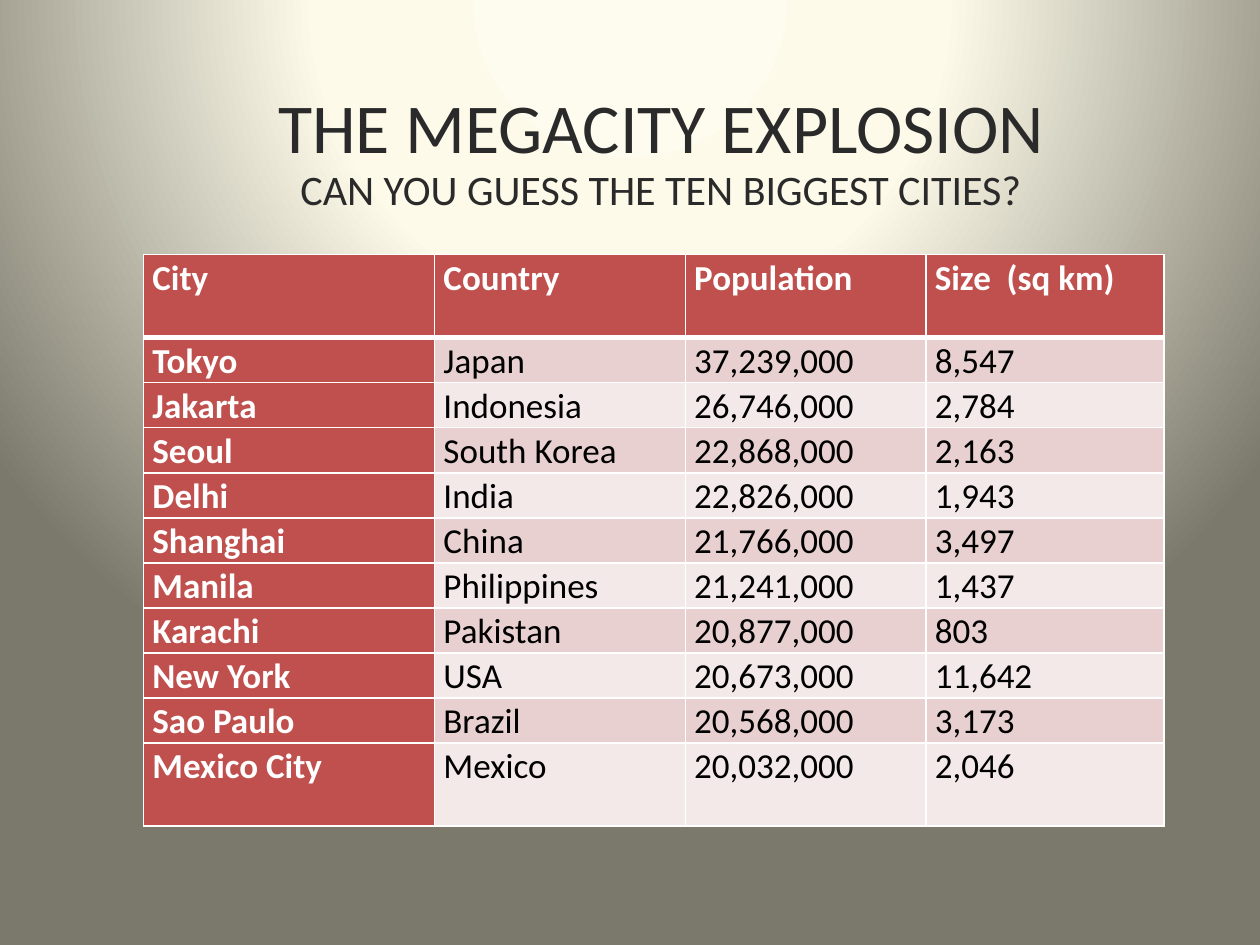
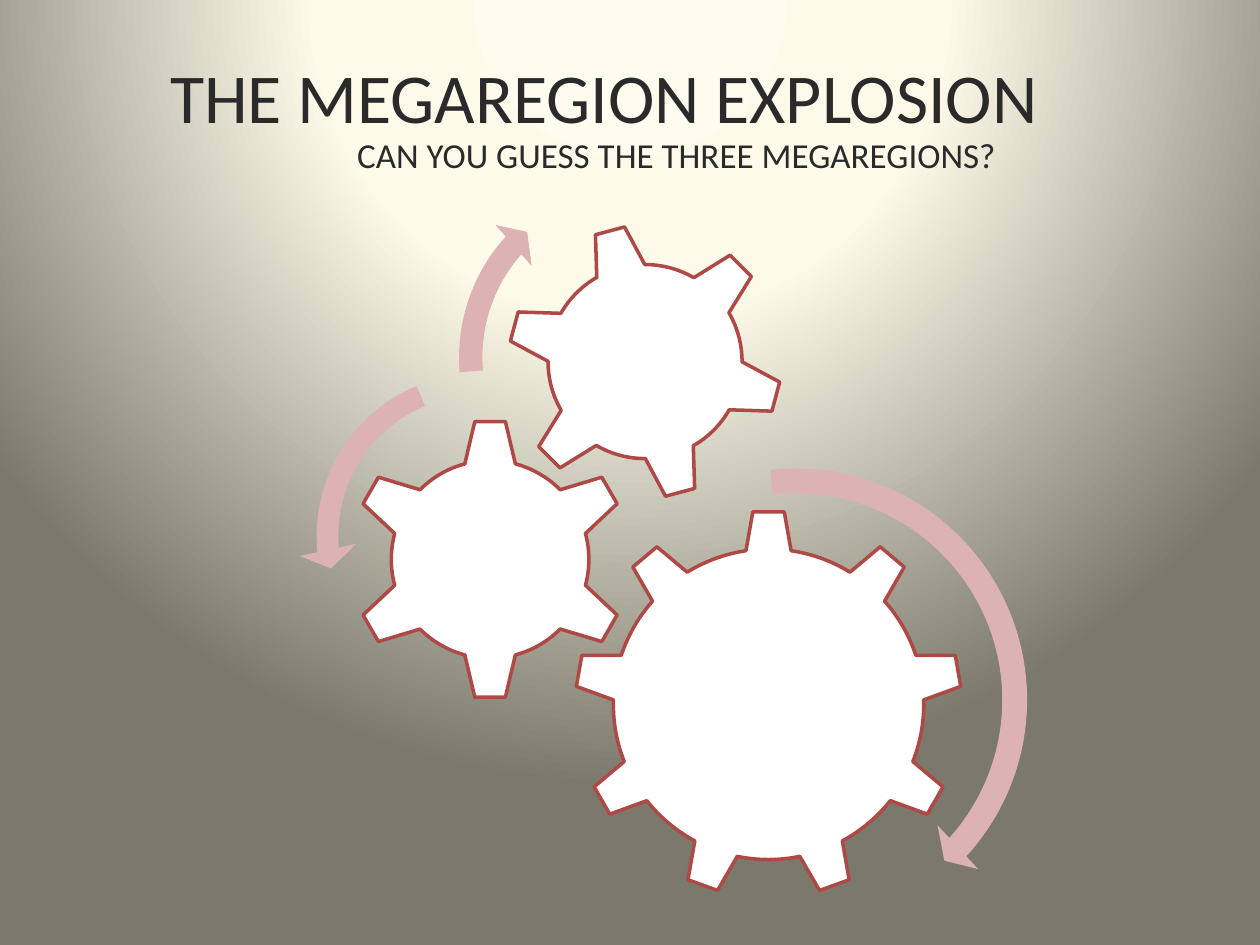
from pptx import Presentation
from pptx.dml.color import RGBColor
from pptx.enum.shapes import MSO_SHAPE as SHAPE
from pptx.enum.text import MSO_ANCHOR as ANCHOR, MSO_AUTO_SIZE as FIT, PP_ALIGN as ALIGN
from pptx.oxml import parse_xml
from pptx.oxml.ns import nsdecls
from pptx.util import Inches, Pt

COLORS = {
    "glow": "FEFCEE", "cream": "FDFAEA", "olive": "7B796B", "title": "2A2A2A",
    "red": "C0504D", "band": "E8D0D0", "pale": "F4E9E9", "white": "FFFFFF",
    "black": "000000", "gear_line": "AE4946", "arrow": "DCB3B2",
}
FONT = "Calibri"
TITLE_BOX = (1, 0.3, 8.49, 1.45)

CITY_BOX = (1.14, 2.02)
CITY_COLS = (2.31, 1.99, 1.91, 1.89)
TALL_ROW, ROW = 0.66, 0.33
CITIES = [
    ("City", "Country", "Population", "Size  (sq km)"),
    ("Tokyo", "Japan", "37,239,000", "8,547"),
    ("Jakarta", "Indonesia", "26,746,000", "2,784"),
    ("Seoul", "South Korea", "22,868,000", "2,163"),
    ("Delhi", "India", "22,826,000", "1,943"),
    ("Shanghai", "China", "21,766,000", "3,497"),
    ("Manila", "Philippines", "21,241,000", "1,437"),
    ("Karachi", "Pakistan", "20,877,000", "803"),
    ("New York", "USA", "20,673,000", "11,642"),
    ("Sao Paulo", "Brazil", "20,568,000", "3,173"),
    ("Mexico City", "Mexico", "20,032,000", "2,046"),
]

GEAR_BOX = (2.37, 1.29)
GEARS = [
    (SHAPE.GEAR_9, 2.19, 2.76, 3.08, 0),
    (SHAPE.GEAR_6, 0.4, 2.03, 2.24, 0),
    (SHAPE.GEAR_6, 1.65, 0.48, 2.2, 345),
]
ARROWS = [
    (SHAPE.CIRCULAR_ARROW, 1.97, 2.29, 3.95, (0.05, 2.99, 25.35, 158.22, 0.06)),
    (SHAPE.LEFT_CIRCULAR_ARROW, 0, 1.53, 2.87, (0.06, 4.3, 104.89, 148.38, 0.08)),
    (SHAPE.CIRCULAR_ARROW, 1.15, 0, 3.09, (0.06, 3.94, 133.14, 105.08, 0.07)),
]


def rgb(name):
    """Return the named colour."""
    return RGBColor.from_string(COLORS[name])


def set_background(master):
    """Give the master a round glow that falls from the top edge."""
    master.background.fill.solid()
    bg = master.element.xpath(".//p:bgPr")[0]
    stops = "".join(
        f'<a:gs pos="{pos * 1000}"><a:srgbClr val="{COLORS[name]}"/></a:gs>'
        for pos, name in ((0, "glow"), (40, "cream"), (100, "olive")))
    bg.replace(bg[0], parse_xml(
        f'<a:gradFill {nsdecls("a")} rotWithShape="1"><a:gsLst>{stops}</a:gsLst>'
        '<a:path path="circle"><a:fillToRect l="50000" t="-80000" r="50000" b="180000"/>'
        '</a:path></a:gradFill>'))


def add_run(p, text, size, color, bold=False):
    """Append a formatted run to a paragraph."""
    r = p.add_run()
    r.text = text
    r.font.name, r.font.size, r.font.bold = FONT, Pt(size), bold
    r.font.color.rgb = rgb(color)


def add_titled_slide(prs, title, question, question_size, indent=None, bottom=0.05):
    """Add a slide with a headline and a question; an indent left-aligns the headline."""
    s = prs.slides.add_slide(prs.slide_layouts[5])
    sp = s.shapes.title
    sp.left, sp.top, sp.width, sp.height = map(Inches, TITLE_BOX)
    tf = sp.text_frame
    tf.word_wrap, tf.auto_size = True, FIT.NONE
    tf.vertical_anchor, tf.margin_bottom = ANCHOR.BOTTOM, Inches(bottom)
    head, sub = tf.paragraphs[0], tf.add_paragraph()
    for p, text, size in ((head, title, 40), (sub, question, question_size)):
        p.alignment, p.line_spacing = ALIGN.CENTER, 0.9
        add_run(p, text, size, "title")
    if indent:
        head.alignment = ALIGN.LEFT
        head._p.get_or_add_pPr().set("marL", str(Inches(indent)))
    return s


def set_borders(cell, top, bottom):
    """Draw white borders, with the given widths above and below."""
    tc_pr = cell._tc.get_or_add_tcPr()
    for i, (side, width) in enumerate((("L", 1), ("R", 1), ("T", top), ("B", bottom))):
        tc_pr.insert(i, parse_xml(
            f'<a:ln{side} {nsdecls("a")} w="{Pt(width)}"><a:solidFill>'
            f'<a:srgbClr val="{COLORS["white"]}"/></a:solidFill></a:ln{side}>'))


def add_city_table(s, left, top):
    """Add the table of cities with a red header row and first column."""
    heights = [TALL_ROW] + [ROW] * (len(CITIES) - 2) + [TALL_ROW]
    size = (sum(CITY_COLS), sum(heights))
    table = s.shapes.add_table(len(CITIES), len(CITY_COLS),
                               *map(Inches, (left, top, *size))).table
    for col, width in zip(table.columns, CITY_COLS):
        col.width = Inches(width)
    for i, (row, height, city) in enumerate(zip(table.rows, heights, CITIES)):
        row.height = Inches(height)
        for j, (cell, text) in enumerate(zip(row.cells, city)):
            heading = i == 0 or j == 0
            cell.margin_left = cell.margin_right = Inches(0.07)
            cell.margin_top = cell.margin_bottom = 0
            cell.fill.solid()
            cell.fill.fore_color.rgb = rgb("red" if heading else "band" if i % 2 else "pale")
            set_borders(cell, 3 if i == 1 else 1, 3 if i == 0 else 1)
            p = cell.text_frame.paragraphs[0]
            p.line_spacing = 1.05
            add_run(p, text, 20, "white" if heading else "black", heading)


def add_square_shape(group, kind, left, top, size, fill):
    """Add a filled shape of equal width and height, without outline or shadow."""
    sp = group.shapes.add_shape(kind, *map(Inches, (left, top, size, size)))
    sp.shadow.inherit = False
    sp.fill.solid()
    sp.fill.fore_color.rgb = rgb(fill)
    sp.line.fill.background()
    return sp


def add_gear_train(s, left, top):
    """Add three meshing gears and the arrows that show their turning."""
    group = s.shapes.add_group_shape()
    for kind, x, y, size, turn in GEARS:
        sp = add_square_shape(group, kind, left + x, top + y, size, "white")
        sp.line.color.rgb, sp.line.width = rgb("gear_line"), Pt(2)
        sp.rotation = turn
    for kind, x, y, size, values in ARROWS:
        sp = add_square_shape(group, kind, left + x, top + y, size, "arrow")
        for i, value in enumerate(values):
            sp.adjustments[i] = value


def main():
    """Build both slides and save them."""
    prs = Presentation()
    prs.slide_width, prs.slide_height = Inches(10), Inches(7.5)
    set_background(prs.slide_master)
    s = add_titled_slide(prs, "THE MEGACITY EXPLOSION",
                         "CAN YOU GUESS THE TEN BIGGEST CITIES?", 24)
    add_city_table(s, *CITY_BOX)
    s = add_titled_slide(prs, "THE MEGAREGION EXPLOSION",
                         "CAN YOU GUESS THE THREE MEGAREGIONS?", 20, indent=0.25, bottom=0.35)
    add_gear_train(s, *GEAR_BOX)
    prs.save("out.pptx")


if __name__ == "__main__":
    main()
